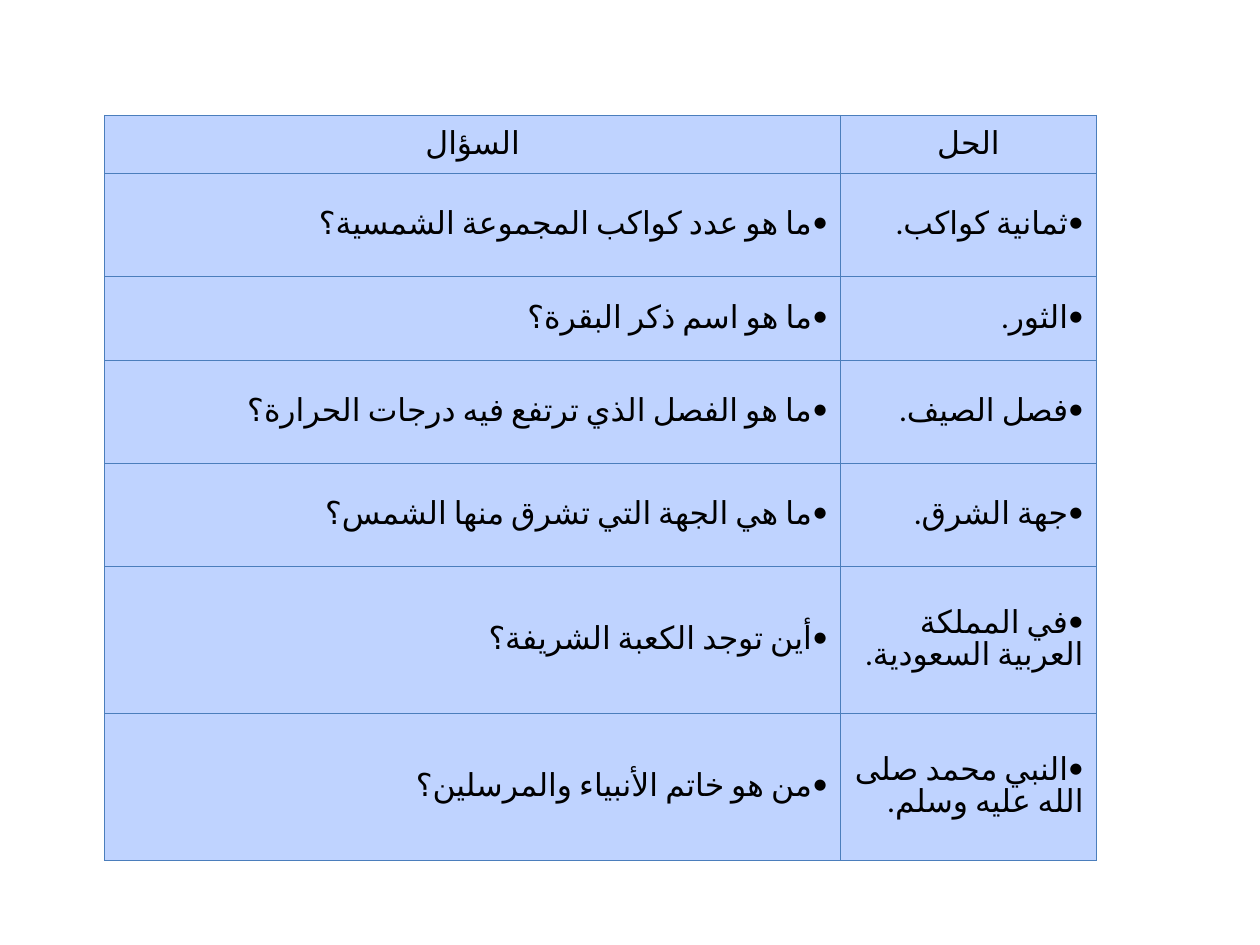
from dataclasses import dataclass

from lxml import etree
from pptx import Presentation
from pptx import oxml
from pptx.dml.color import RGBColor
from pptx.enum import text
from pptx.oxml import ns
from pptx.util import Pt


@dataclass(frozen=True)
class Theme:
    font: str = "Calibri"
    size: float = 18
    ink: str = "000000"
    cell: str = "BFD3FF"
    border: str = "4B7EBC"
    border_width: float = 0.75
    line_spacing: float = 0.85


THEME = Theme()
LEFT, TOP = 59.8, 66
COLUMN_WIDTHS = [420.5, 146.2]
ROW_HEIGHTS = [33.2, 58.8, 48, 58.8, 58.8, 84, 84]
HEADINGS = ("السؤال", "الحل")
QUIZ = [
    ("ما هو عدد كواكب المجموعة الشمسية؟", "ثمانية كواكب."),
    ("ما هو اسم ذكر البقرة؟", "الثور."),
    ("ما هو الفصل الذي ترتفع فيه درجات الحرارة؟", "فصل الصيف."),
    ("ما هي الجهة التي تشرق منها الشمس؟", "جهة الشرق."),
    ("أين توجد الكعبة الشريفة؟", "في المملكة العربية السعودية."),
    ("من هو خاتم الأنبياء والمرسلين؟", "النبي محمد صلى الله عليه وسلم."),
]


def write_text(frame, wording, align=text.PP_ALIGN.RIGHT, bullet=None):
    paragraph = frame.paragraphs[0]
    paragraph.alignment = align
    paragraph.line_spacing = THEME.line_spacing
    properties = paragraph._p.get_or_add_pPr()
    properties.set("rtl", "1")
    if bullet:
        properties.set("marL", "0")
        properties.set("indent", "0")
        etree.SubElement(properties, ns.qn("a:buFont"), typeface=THEME.font)
        etree.SubElement(properties, ns.qn("a:buChar"), char=bullet)
    run = paragraph.add_run()
    run.text = wording
    run.font.name = THEME.font
    run.font.size = Pt(THEME.size)
    run.font.color.rgb = RGBColor.from_string(THEME.ink)
    run_properties = run._r.get_or_add_rPr()
    run_properties.set("lang", "ar-SA")
    etree.SubElement(run_properties, ns.qn("a:cs"), typeface=THEME.font)


def add_borders(cell):
    properties = cell._tc.get_or_add_tcPr()
    for position, side in enumerate(("lnL", "lnR", "lnT", "lnB")):
        border = oxml.parse_xml(
            f'<a:{side} {ns.nsdecls("a")} w="{Pt(THEME.border_width)}">'
            f'<a:solidFill><a:srgbClr val="{THEME.border}"/></a:solidFill>'
            f"</a:{side}>"
        )
        properties.insert(position, border)


def style_cell(cell):
    cell.vertical_anchor = text.MSO_ANCHOR.MIDDLE
    cell.margin_left = cell.margin_right = Pt(7.2)
    cell.margin_top = cell.margin_bottom = Pt(3.6)
    cell.fill.solid()
    cell.fill.fore_color.rgb = RGBColor.from_string(THEME.cell)
    add_borders(cell)


def add_quiz_table(slide):
    quiz_table = slide.shapes.add_table(
        len(ROW_HEIGHTS), len(COLUMN_WIDTHS), Pt(LEFT), Pt(TOP),
        Pt(sum(COLUMN_WIDTHS)), Pt(sum(ROW_HEIGHTS)),
    ).table
    for column, width in zip(quiz_table.columns, COLUMN_WIDTHS):
        column.width = Pt(width)
    for row, height in zip(quiz_table.rows, ROW_HEIGHTS):
        row.height = Pt(height)
    for row_number, entries in enumerate([HEADINGS, *QUIZ]):
        if row_number == 0:
            text_format = {"align": text.PP_ALIGN.CENTER}
        else:
            text_format = {"bullet": "•"}
        for column_number, wording in enumerate(entries):
            cell = quiz_table.cell(row_number, column_number)
            style_cell(cell)
            write_text(cell.text_frame, wording, **text_format)


def main():
    presentation = Presentation()
    presentation.slide_width = Pt(720)
    presentation.slide_height = Pt(540)
    slide = presentation.slides.add_slide(presentation.slide_layouts[6])
    add_quiz_table(slide)
    presentation.save("out.pptx")


if __name__ == "__main__":
    main()
